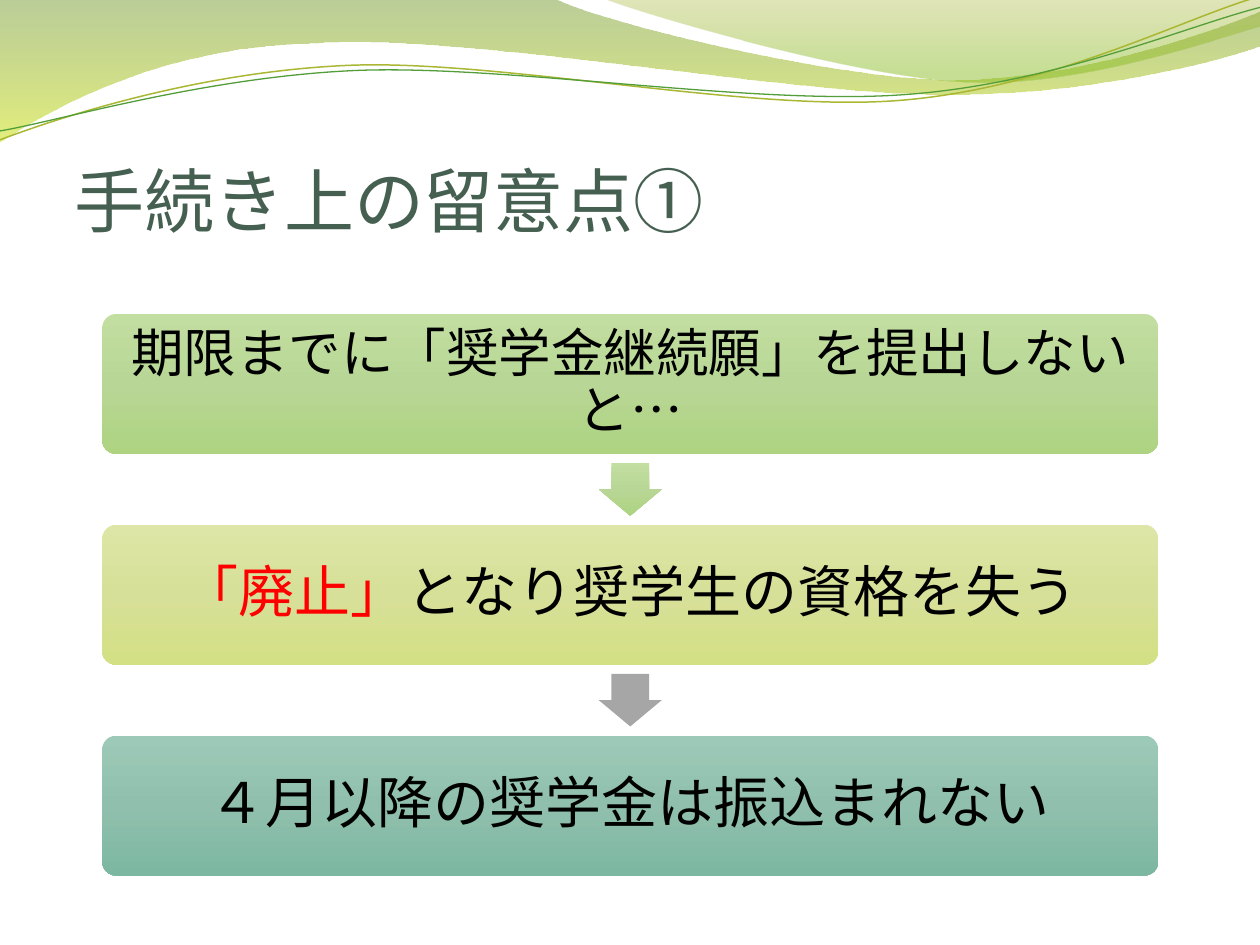
from dataclasses import dataclass
from math import cos, radians, sin

from lxml.etree import SubElement
from pptx import Presentation
from pptx.dml.color import RGBColor as Rgb
from pptx.enum.shapes import MSO_SHAPE as Kind
from pptx.enum.text import MSO_ANCHOR as Anchor, PP_ALIGN as Align
from pptx.oxml.ns import qn
from pptx.util import Cm, Pt

FONT = "Noto Sans CJK JP"
HUES = {
    "title": "455F51", "text": "000000", "alert": "FF0000", "gray": "A6A6A6",
    "olive": "A9B733", "leaf": "549E39",
}
# Gradient stops run from top to bottom: position, colour, opacity in percent
FADES = {
    "wave": [(0, "69921C", 45), (100, "CCE10F", 55)],
    "crest": [(0, "9BAA1A", 30), (80, "81BA16", 45)],
    "green": [(0, "C2DFA1", 100), (50, "B8D695", 100), (100, "AED481", 100)],
    "lime": [(0, "DDE6A6", 100), (50, "D7E098", 100), (100, "D4E084", 100)],
    "teal": [(0, "9DCAB8", 100), (50, "90C0AD", 100), (100, "7CB7A1", 100)],
}
LEFT, TOP, WIDE, HIGH, PITCH = 2.06, 6.33, 21.29, 2.82, 4.25
PAD = 0.08
ARROW_W, ARROW_H = 1.06, 1.27
TILT = 2.7
PIVOT = (12.68, 1.46)


@dataclass
class Curve:
    """An outline in cm: two numbers per step draw a line, six a Bézier curve."""
    start: tuple
    steps: list
    hue: str
    width: float = 0


@dataclass
class Stage:
    runs: list
    size: int
    inset: float
    fade: str
    arrow: str = ""


CURVES = [
    Curve((0, 0), [
        (11.18, -0.03), (12.07, 0.43, 16.84, 1.6, 19.25, 1.6),
        (21.67, 1.6, 24.33, 0.66, 25.4, 0.23), (25.43, 0.91),
        (24.97, 1.12, 22.07, 1.93, 18.95, 1.9),
        (15.8, 1.9, 9.68, 0.71, 6.53, 0.86),
        (3.28, 0.91, 1.17, 2.11, -0.03, 2.87), (0, 0)], "wave"),
    Curve((12.17, -0.03), [
        (12.93, 0.28, 17.32, 1.57, 19.51, 1.65),
        (21.72, 1.75, 24.41, 0.81, 25.4, 0.53), (25.4, 0),
        (12.17, -0.03)], "crest"),
    Curve((0, 2.82), [
        (1.22, 2.36, 3.99, 1.45, 7.01, 1.32),
        (10.03, 1.19, 15.04, 2.26, 18.08, 2.03),
        (21.16, 1.8, 23.83, 0.38, 25.32, -0.05)], "olive", 0.85),
    Curve((0, 2.64), [
        (1.19, 2.44, 4.14, 1.55, 7.19, 1.42),
        (10.21, 1.3, 15.16, 2.13, 18.21, 1.91),
        (21.23, 1.7, 23.9, 0.53, 25.4, 0.15)], "leaf", 0.75),
]
STAGES = [
    Stage([("期限までに「奨学金継続願」を提出しないと…", "text")],
          30, 0.3, "green", "green"),
    Stage([("「廃止」", "alert"), ("となり奨学生の資格を失う", "text")],
          32, 0.33, "lime", "gray"),
    Stage([("４月以降の奨学金は振込まれない", "text")], 32, 0.33, "teal"),
]


def paint(shape, hue: str) -> None:
    """Fill with a flat colour or a fade, without line or shadow."""
    shape.shadow.inherit = False
    shape.line.fill.background()
    if hue in HUES:
        shape.fill.solid()
        shape.fill.fore_color.rgb = Rgb.from_string(HUES[hue])
        return
    shape.fill.gradient()
    shape.fill.gradient_angle = 270
    grad = shape._element.spPr.find(qn("a:gradFill"))
    grad.set("rotWithShape", "0")
    stops = grad.find(qn("a:gsLst"))
    for old in list(stops):
        stops.remove(old)
    for pos, code, solid in FADES[hue]:
        stop = SubElement(stops, qn("a:gs"), pos=str(pos * 1000))
        color = SubElement(stop, qn("a:srgbClr"), val=code)
        if solid < 100:
            SubElement(color, qn("a:alpha"), val=str(solid * 1000))


def turn(point: tuple) -> tuple:
    """Turn a point by the tilt that the shape's rotation takes back."""
    angle = radians(TILT)
    dx, dy = point[0] - PIVOT[0], point[1] - PIVOT[1]
    return (PIVOT[0] + dx * cos(angle) - dy * sin(angle),
            PIVOT[1] + dx * sin(angle) + dy * cos(angle))


def bend(shape, steps: list) -> None:
    """Join the three line points of each Bézier step into one curve."""
    lines = iter(list(shape._element.iter(qn("a:lnTo"))))
    for step in steps:
        first, *more = [next(lines) for _ in range(len(step) // 2)]
        if more:
            first.tag = qn("a:cubicBezTo")
            for line in more:
                first.append(line[0])
                line.getparent().remove(line)


def draw_curve(slide, curve: Curve) -> None:
    points = [curve.start]
    for step in curve.steps:
        points += zip(step[::2], step[1::2])
    if curve.width:
        points = [turn(point) for point in points]
    first, *rest = [(Cm(x), Cm(y)) for x, y in points]
    pen = slide.shapes.build_freeform(*first)
    pen.add_line_segments(rest, close=not curve.width)
    shape = pen.convert_to_shape()
    bend(shape, curve.steps)
    if not curve.width:
        paint(shape, curve.hue)
        return
    shape.rotation = 360 - TILT
    shape.shadow.inherit = False
    shape.fill.background()
    shape.line.color.rgb = Rgb.from_string(HUES[curve.hue])
    shape.line.width = Pt(curve.width)


def write(slide, area: tuple, runs: list, size: int, frame: dict, para: dict) -> None:
    text = slide.shapes.add_textbox(*map(Cm, area)).text_frame
    line = text.paragraphs[0]
    for target, style in ((text, {"word_wrap": True, **frame}), (line, para)):
        for name, value in style.items():
            setattr(target, name, value)
    for words, hue in runs:
        run = line.add_run()
        run.text = words
        for name, value in {"name": FONT, "size": Pt(size)}.items():
            setattr(run.font, name, value)
        run.font.color.rgb = Rgb.from_string(HUES[hue])
        SubElement(run.font._element, qn("a:ea"), typeface=FONT)


def draw_stage(slide, stage: Stage, top: float) -> None:
    box = slide.shapes.add_shape(
        Kind.ROUNDED_RECTANGLE, Cm(LEFT), Cm(top), Cm(WIDE), Cm(HIGH))
    box.adjustments[0] = 0.1
    paint(box, stage.fade)
    sides = ("left", "top", "right", "bottom")
    frame = {f"margin_{side}": Cm(stage.inset) for side in sides}
    area = (LEFT + PAD, top + PAD, WIDE - 2 * PAD, HIGH - 2 * PAD)
    write(slide, area, stage.runs, stage.size,
          {**frame, "vertical_anchor": Anchor.MIDDLE},
          {"alignment": Align.CENTER, "line_spacing": 0.9})
    if stage.arrow:
        mid = top + (HIGH + PITCH) / 2
        arrow = slide.shapes.add_shape(
            Kind.RIGHT_ARROW, Cm(LEFT + (WIDE - ARROW_W) / 2),
            Cm(mid - ARROW_H / 2), Cm(ARROW_W), Cm(ARROW_H))
        arrow.rotation = 90
        arrow.adjustments[0] = 0.6
        arrow.adjustments[1] = 0.5
        paint(arrow, stage.arrow)


def main() -> None:
    deck = Presentation()
    deck.slide_width, deck.slide_height = Cm(25.4), Cm(19.05)
    slide = deck.slides.add_slide(deck.slide_layouts[6])
    for curve in CURVES:
        draw_curve(slide, curve)
    write(slide, (1.5, 1.68, 22.86, 3.18), [("手続き上の留意点①", "title")], 40,
          {"margin_left": 0, "margin_right": 0, "margin_top": Cm(0.13),
           "margin_bottom": 0, "vertical_anchor": Anchor.BOTTOM},
          {"line_spacing": 0.8})
    for i, stage in enumerate(STAGES):
        draw_stage(slide, stage, TOP + i * PITCH)
    deck.save("out.pptx")


if __name__ == "__main__":
    main()
